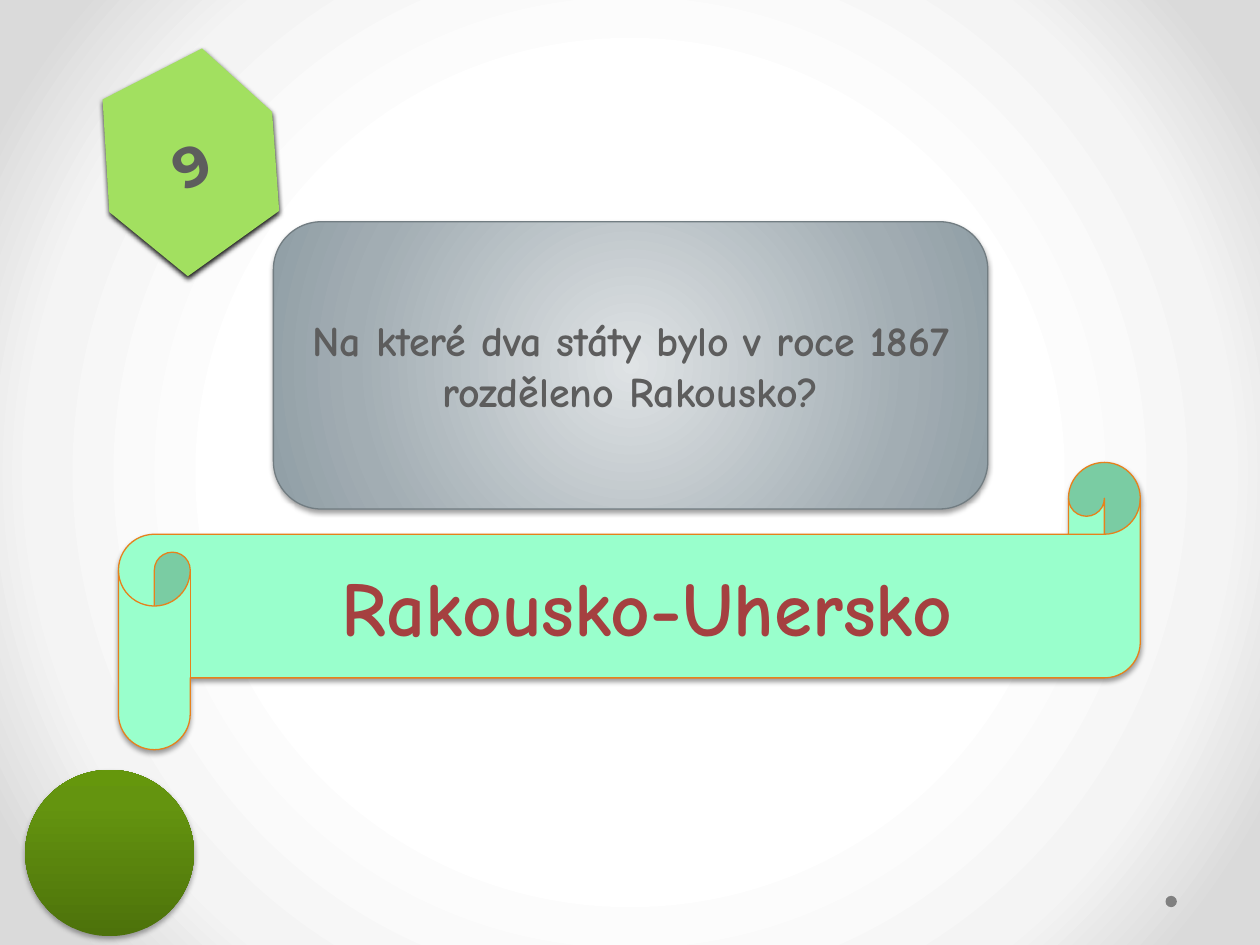
from dataclasses import dataclass

from lxml import etree
from pptx import Presentation
from pptx.dml.color import RGBColor
from pptx.enum.shapes import MSO_SHAPE as Shape
from pptx.enum.text import MSO_ANCHOR, PP_ALIGN
from pptx.oxml.ns import qn
from pptx.util import Inches, Pt


@dataclass(frozen=True)
class Theme:
    """Colours, fonts and type sizes of the quiz slide."""
    hand: str = "Comic Neue"
    sans: str = "Montserrat"
    number_size: int = 32
    question_size: int = 24
    answer_size: int = 44
    ink: str = "5D5D5D"
    answer: str = "A54040"
    badge: str = "A2E060"
    scroll: str = "99FFCC"
    scroll_edge: str = "E6811C"
    card_edge: str = "727D82"
    dot: str = "808080"
    backdrop: tuple = ((50, "FFFFFF"), (76, "F4F4F4"), (92, "DADADA"))
    card: tuple = ((0, "DFE3E5"), (72, "A2ADB3"), (100, "909EA5"))
    ball: tuple = ((0, "4D720B"), (80, "64940F"), (100, "65970C"))


THEME = Theme()


def rgb(value):
    """Turn a hex string into a colour."""
    return RGBColor.from_string(value)


def set_gradient(fill, parent, stops, angle=None):
    """Give a fill a linear gradient, or a circular one when no angle is given."""
    fill.solid()
    solid = parent.find(qn("a:solidFill"))
    grad = etree.Element(qn("a:gradFill"), rotWithShape="1")
    gs_list = etree.SubElement(grad, qn("a:gsLst"))
    for pos, color in stops:
        gs = etree.SubElement(gs_list, qn("a:gs"), pos=str(pos * 1000))
        etree.SubElement(gs, qn("a:srgbClr"), val=color)
    if angle is None:
        circle = etree.SubElement(grad, qn("a:path"))
        circle.set("path", "circle")
        sides = dict.fromkeys("ltrb", "50000")
        etree.SubElement(circle, qn("a:fillToRect"), **sides)
    else:
        etree.SubElement(grad, qn("a:lin"), ang=str(angle * 60000), scaled="0")
    parent.replace(solid, grad)


def add_shadow(sp, alpha=38, dist=1.6):
    """Drop a soft black shadow straight below a shape."""
    effects = sp._element.spPr.find(qn("a:effectLst"))
    shadow = etree.SubElement(effects, qn("a:outerShdw"), blurRad=str(Pt(3.1)),
                              dist=str(Pt(dist)), dir="5400000", rotWithShape="0")
    color = etree.SubElement(shadow, qn("a:srgbClr"), val="000000")
    etree.SubElement(color, qn("a:alpha"), val=str(alpha * 1000))


def style(sp, fill=None, stops=None, angle=None, edge=None):
    """Set the fill and outline of a shape and clear its default shadow."""
    if stops:
        set_gradient(sp.fill, sp._element.spPr, stops, angle)
    else:
        sp.fill.solid()
        sp.fill.fore_color.rgb = rgb(fill)
    if edge:
        sp.line.color.rgb = rgb(edge)
        sp.line.width = Pt(0.75)
    else:
        sp.line.fill.background()
    sp.shadow.inherit = False


def write(sp, text, font, size, color):
    """Write one bold centred line of text in the middle of a shape."""
    tf = sp.text_frame
    tf.word_wrap = True
    tf.vertical_anchor = MSO_ANCHOR.MIDDLE
    p = tf.paragraphs[0]
    p.alignment = PP_ALIGN.CENTER
    r = p.add_run()
    r.text = text
    r.font.name = font
    r.font.size = Pt(size)
    r.font.bold = True
    r.font.color.rgb = rgb(color)


def add_badge(slide, box, number):
    """Add the tilted six-sided badge with the question number."""
    left, top, width, height = box
    corners = ((0.79, 0), (1, 0.42), (0.83, 0.88), (0.25, 1), (0, 0.56), (0.2, 0.04))
    points = [(left + int(width * x), top + int(height * y)) for x, y in corners]
    builder = slide.shapes.build_freeform(*points[0])
    builder.add_line_segments(points[1:], close=True)
    sp = builder.convert_to_shape()
    sp.rotation = 337
    style(sp, THEME.badge)
    add_shadow(sp, alpha=90)
    write(sp, number, THEME.sans, THEME.number_size, THEME.ink)


def add_question(slide, box, text):
    """Add the rounded question card."""
    sp = slide.shapes.add_shape(Shape.ROUNDED_RECTANGLE, *box)
    style(sp, stops=THEME.card, edge=THEME.card_edge)
    add_shadow(sp)
    write(sp, text, THEME.hand, THEME.question_size, THEME.ink)


def add_ball(slide, box):
    """Add the green ball in the corner."""
    sp = slide.shapes.add_shape(Shape.OVAL, *box)
    style(sp, stops=THEME.ball, angle=270)
    add_shadow(sp, alpha=35, dist=1.8)


def add_answer(slide, box, text):
    """Add the scroll with the answer."""
    sp = slide.shapes.add_shape(Shape.HORIZONTAL_SCROLL, *box)
    sp.adjustments[0] = 0.25
    style(sp, THEME.scroll, edge=THEME.scroll_edge)
    add_shadow(sp)
    write(sp, text, THEME.hand, THEME.answer_size, THEME.answer)


def add_backdrop(slide, dot_box):
    """Paint the background and its small grey dot."""
    fill = slide.background.fill
    fill.solid()
    bg_pr = slide._element.cSld.find(qn("p:bg")).find(qn("p:bgPr"))
    set_gradient(fill, bg_pr, THEME.backdrop)
    style(slide.shapes.add_shape(Shape.OVAL, *dot_box), THEME.dot)


def inches(*lengths):
    """Turn plain numbers into a box of lengths."""
    return tuple(Inches(n) for n in lengths)


def main():
    """Build and save the quiz slide."""
    prs = Presentation()
    prs.slide_width, prs.slide_height = inches(10, 7.5)
    slide = prs.slides.add_slide(prs.slide_layouts[6])
    add_backdrop(slide, inches(9.25, 7.11, 0.09, 0.09))
    add_badge(slide, inches(0.77, 0.49, 1.5, 1.62), "9")
    add_question(slide, inches(2.17, 1.76, 5.67, 2.28),
                 "Na které dva státy bylo v roce 1867 rozděleno Rakousko?")
    add_ball(slide, inches(0.2, 6.11, 1.34, 1.32))
    add_answer(slide, inches(0.94, 3.67, 8.11, 2.28), "Rakousko-Uhersko")
    prs.save("out.pptx")


if __name__ == "__main__":
    main()
